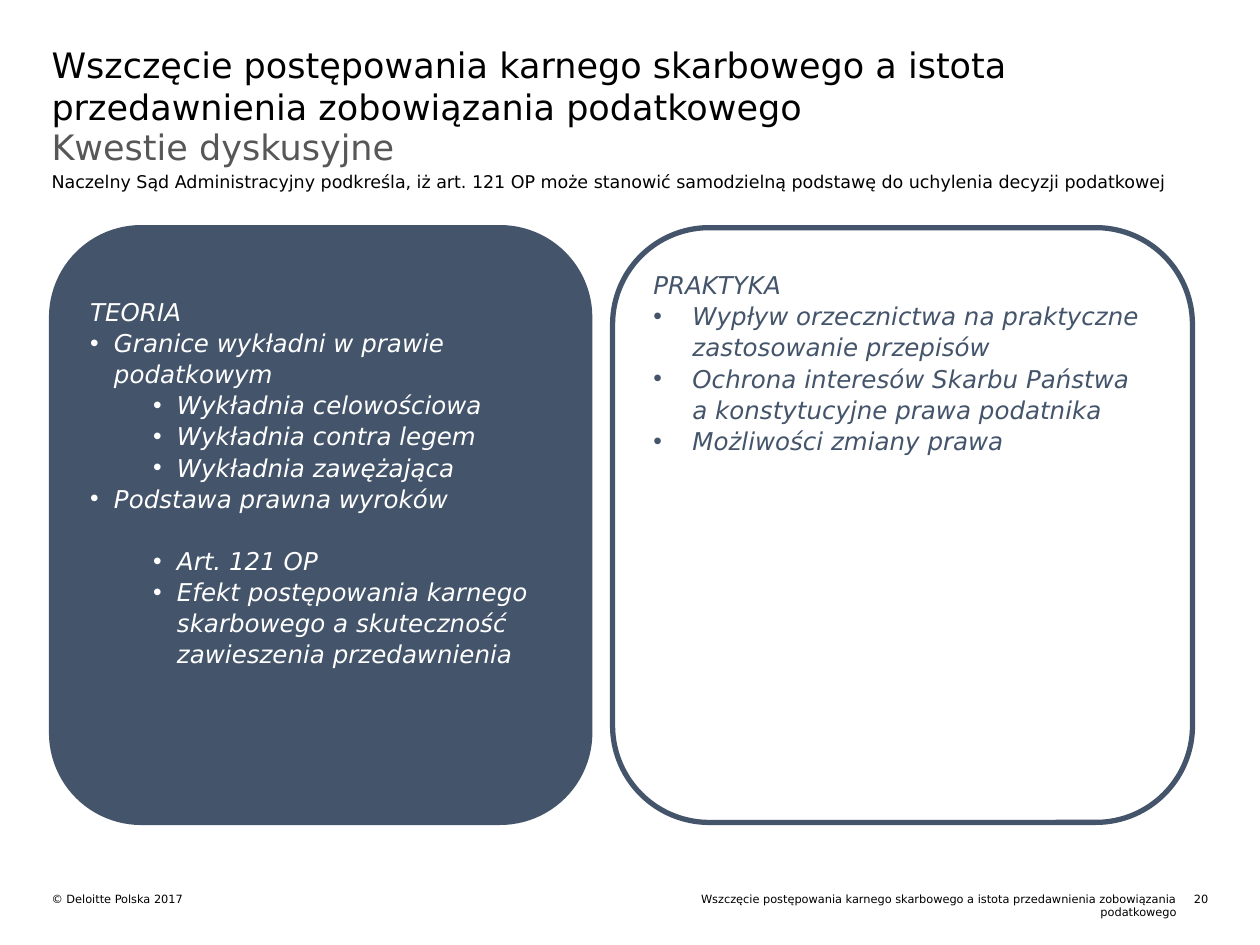
from lxml.etree import SubElement
from pptx import Presentation
from pptx.dml.color import RGBColor
from pptx.enum.shapes import MSO_SHAPE
from pptx.enum.text import MSO_ANCHOR, PP_ALIGN
from pptx.oxml.ns import qn
from pptx.util import Cm, Pt

FONT = "DejaVu Sans"
BLACK, GREY, NAVY, WHITE = "000000", "575757", "44546A", "FFFFFF"
MARGIN, CONTENT_WIDTH = 1.04, 23.32
FOOTER_TOP = 17.98
PANEL_TOP, PANEL_HEIGHT, PANEL_PADDING = 4.59, 11.99, 0.25
LINE_GAP = 17.7

TITLE = "Wszczęcie postępowania karnego skarbowego a istota przedawnienia zobowiązania podatkowego"
LABELS = [
    {"text": TITLE, "box": (MARGIN, 0.87, CONTENT_WIDTH, 1.67), "size": 20},
    {"text": "Kwestie dyskusyjne", "box": (MARGIN, 2.54, CONTENT_WIDTH, 0.91),
     "size": 20, "color": GREY},
    {"text": "Naczelny Sąd Administracyjny podkreśla, iż art. 121 OP może stanowić "
             "samodzielną podstawę do uchylenia decyzji podatkowej",
     "box": (MARGIN, 3.45, 22.58, 1.5), "size": 10},
    {"text": "© Deloitte Polska 2017", "box": (MARGIN, FOOTER_TOP, 11.15, 0.28), "size": 6.5},
    {"text": TITLE, "box": (13.51, FOOTER_TOP, 10.21, 0.56), "size": 6.5, "align": PP_ALIGN.RIGHT},
    {"text": "20", "box": (23.72, FOOTER_TOP, 0.64, 0.28), "size": 6.5, "align": PP_ALIGN.RIGHT},
]

PANELS = [
    {"left": MARGIN, "width": 10.85, "fill": NAVY, "color": WHITE,
     "indent": 0.48, "top_inset": 0.83, "lines": [
         ("TEORIA", None, 0),
         ("Granice wykładni w prawie podatkowym", 0, 0),
         ("Wykładnia celowościowa", 1, 0),
         ("Wykładnia contra legem", 1, 0),
         ("Wykładnia zawężająca", 1, 0),
         ("Podstawa prawna wyroków", 0, 0),
         ("Art. 121 OP", 1, LINE_GAP),
         ("Efekt postępowania karnego skarbowego a skuteczność zawieszenia przedawnienia", 1, 0),
     ]},
    {"left": 12.35, "width": 11.69, "fill": WHITE, "color": NAVY,
     "indent": 0.79, "top_inset": PANEL_PADDING, "lines": [
         ("PRAKTYKA", None, 0),
         ("Wypływ orzecznictwa na praktyczne zastosowanie przepisów", 0, 0),
         ("Ochrona interesów Skarbu Państwa a konstytucyjne prawa podatnika", 0, 0),
         ("Możliwości zmiany prawa", 0, 0),
     ]},
]


def rgb(value):
    """Turn a hex string into a colour."""
    return RGBColor.from_string(value)


def set_font(paragraph, size, color, italic=False):
    """Set the font of a whole paragraph."""
    font = paragraph.font
    font.name, font.size, font.italic = FONT, Pt(size), italic
    font.color.rgb = rgb(color)


def prepare_frame(text_frame, padding, top_inset):
    """Anchor wrapped text at the top with the given insets."""
    text_frame.word_wrap = True
    text_frame.vertical_anchor = MSO_ANCHOR.TOP
    text_frame.margin_left = text_frame.margin_right = text_frame.margin_bottom = Cm(padding)
    text_frame.margin_top = Cm(top_inset)


def add_bullet(paragraph, level, indent):
    """Give a paragraph a hanging bullet."""
    paragraph.level = level
    properties = paragraph._p.get_or_add_pPr()
    properties.set("marL", str(Cm(indent + 1.27 * level)))
    properties.set("indent", str(-Cm(indent)))
    SubElement(properties, qn("a:buFont"), typeface="Arial")
    SubElement(properties, qn("a:buChar"), char="•")


def add_label(slide, text, box, size, color=BLACK, align=PP_ALIGN.LEFT):
    """Add a single paragraph in a text box."""
    text_frame = slide.shapes.add_textbox(*map(Cm, box)).text_frame
    prepare_frame(text_frame, 0, 0)
    paragraph = text_frame.paragraphs[0]
    paragraph.text, paragraph.alignment = text, align
    set_font(paragraph, size, color)


def add_panel(slide, left, width, fill, color, indent, top_inset, lines):
    """Add a rounded panel with a heading and bullets."""
    shape = slide.shapes.add_shape(
        MSO_SHAPE.ROUNDED_RECTANGLE, Cm(left), Cm(PANEL_TOP), Cm(width), Cm(PANEL_HEIGHT))
    shape.shadow.inherit = False
    shape.fill.solid()
    shape.fill.fore_color.rgb = rgb(fill)
    shape.line.color.rgb = rgb(NAVY)
    shape.line.width = Pt(3)
    text_frame = shape.text_frame
    prepare_frame(text_frame, PANEL_PADDING, top_inset)
    for index, (text, level, space_before) in enumerate(lines):
        paragraph = text_frame.add_paragraph() if index else text_frame.paragraphs[0]
        paragraph.text, paragraph.alignment = text, PP_ALIGN.LEFT
        paragraph.line_spacing = 1.06
        if space_before:
            paragraph.space_before = Pt(space_before)
        if level is not None:
            add_bullet(paragraph, level, indent)
        set_font(paragraph, 14, color, italic=True)


def main():
    """Build the slide and save it."""
    presentation = Presentation()
    presentation.slide_width, presentation.slide_height = Cm(25.4), Cm(19.05)
    slide = presentation.slides.add_slide(presentation.slide_layouts[6])
    for label in LABELS:
        add_label(slide, **label)
    for panel in PANELS:
        add_panel(slide, **panel)
    presentation.save("out.pptx")


if __name__ == "__main__":
    main()
